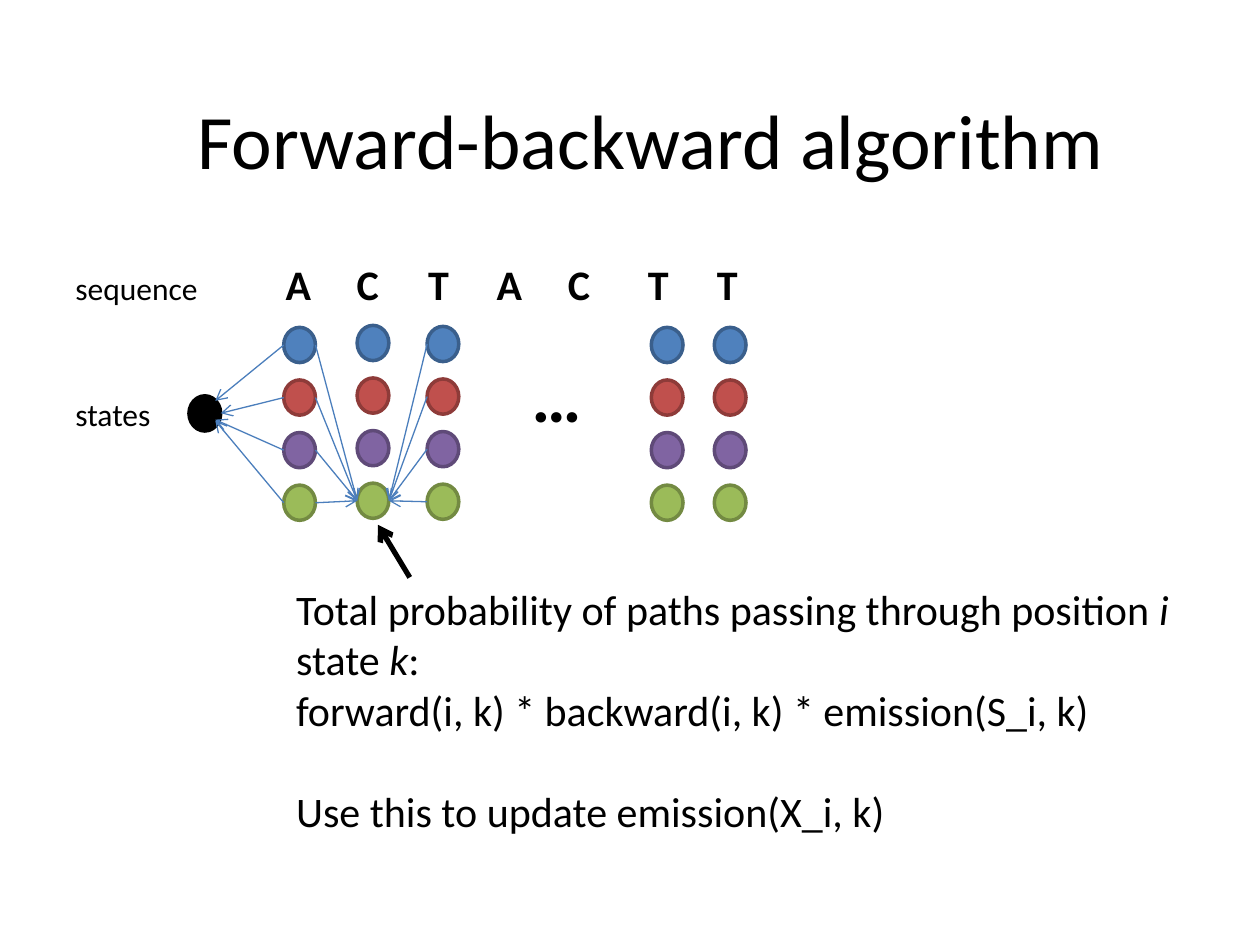
from dataclasses import dataclass

from lxml import etree
from pptx import Presentation
from pptx.dml.color import RGBColor
from pptx.enum.shapes import MSO_CONNECTOR, MSO_SHAPE
from pptx.enum.text import MSO_ANCHOR, PP_ALIGN
from pptx.oxml.ns import qn
from pptx.slide import Slide
from pptx.util import Cm, Pt

COLORS = {
    "black": "000000",
    "arrow": "4B7EBC",
    "blue": "4F81BD",
    "blue edge": "3A5F8C",
    "red": "C0504D",
    "red edge": "8E3B39",
    "purple": "8064A2",
    "purple edge": "5F4A78",
    "green": "9BBB59",
    "green edge": "738A42",
}
STATES = ("blue", "red", "purple", "green")
STATE_WIDTH, STATE_HEIGHT, STATE_PITCH = 0.64, 0.71, 1.06


@dataclass(frozen=True)
class Position:
    left: float
    top: float

    @property
    def right(self) -> float:
        return self.left + STATE_WIDTH

    def middle(self, state: int) -> float:
        return self.top + state * STATE_PITCH + STATE_HEIGHT / 2


@dataclass(frozen=True)
class Arrow:
    start: tuple[float, float]
    end: tuple[float, float]
    color: str = "arrow"
    width: float = 0.75


def rgb(name: str) -> RGBColor:
    return RGBColor.from_string(COLORS[name])


def add_state(slide: Slide, left: float, top: float, fill: str, edge: str) -> None:
    circle = slide.shapes.add_shape(
        MSO_SHAPE.OVAL, Cm(left), Cm(top), Cm(STATE_WIDTH), Cm(STATE_HEIGHT)
    )
    circle.shadow.inherit = False
    circle.fill.solid()
    circle.fill.fore_color.rgb = rgb(fill)
    circle.line.color.rgb = rgb(edge)
    circle.line.width = Pt(2)


def add_position(slide: Slide, position: Position) -> None:
    for index, state in enumerate(STATES):
        top = position.top + index * STATE_PITCH
        add_state(slide, position.left, top, state, f"{state} edge")


def add_arrow(slide: Slide, arrow: Arrow) -> None:
    ends = [Cm(length) for length in (*arrow.start, *arrow.end)]
    connector = slide.shapes.add_connector(MSO_CONNECTOR.STRAIGHT, *ends)
    connector.line.color.rgb = rgb(arrow.color)
    connector.line.width = Pt(arrow.width)
    outline = connector.line._get_or_add_ln()
    etree.SubElement(outline, qn("a:tailEnd"), type="arrow")
    etree.SubElement(connector._element.spPr, qn("a:effectLst"))


def add_text(
    slide: Slide,
    text: str | list[list[str]],
    *,
    box: tuple[float, float, float, float],
    size: float,
    bold: bool = False,
    align: PP_ALIGN = PP_ALIGN.LEFT,
    anchor: MSO_ANCHOR = MSO_ANCHOR.TOP,
    tabs: tuple[float, ...] = (),
    last_gap: float = 0,
) -> None:
    frame = slide.shapes.add_textbox(*(Cm(length) for length in box)).text_frame
    frame.word_wrap = True
    frame.vertical_anchor = anchor
    lines = [[text]] if isinstance(text, str) else text
    for index, pieces in enumerate(lines):
        paragraph = frame.add_paragraph() if index else frame.paragraphs[0]
        paragraph.alignment = align
        if last_gap and index == len(lines) - 1:
            paragraph.space_before = Pt(last_gap)
        if tabs:
            stops = etree.SubElement(paragraph._p.get_or_add_pPr(), qn("a:tabLst"))
            for tab in tabs:
                etree.SubElement(stops, qn("a:tab"), pos=str(int(Cm(tab))), algn="l")
        for order, piece in enumerate(pieces):
            run = paragraph.add_run()
            run.text = piece
            run.font.name = "Calibri"
            run.font.size = Pt(size)
            run.font.bold = bold
            run.font.italic = order % 2 == 1
            run.font.color.rgb = rgb("black")


def main() -> None:
    presentation = Presentation()
    presentation.slide_width = Cm(25.4)
    presentation.slide_height = Cm(19.05)
    slide = presentation.slides.add_slide(presentation.slide_layouts[6])

    first = Position(5.72, 6.6)
    current = Position(7.2, 6.56)
    following = Position(8.61, 6.58)
    closing = [Position(13.13, 6.6), Position(14.4, 6.6)]

    add_text(slide, "Forward-backward algorithm", box=(1.69, 1.2, 22.86, 3.18),
             size=44, align=PP_ALIGN.CENTER, anchor=MSO_ANCHOR.MIDDLE)
    add_text(slide, "\t".join("ACTACTT"), box=(5.51, 5.08, 11.43, 1.27), size=24,
             bold=True, tabs=(1.43, 2.87, 4.25, 5.69, 7.3, 8.69))
    for label, top in (("sequence", 5.3), ("states", 7.84)):
        add_text(slide, label, box=(1.27, top, 3.39, 1.12), size=18)
    add_text(slide, "…", box=(9.74, 6.98, 2.96, 2.16), size=40, bold=True,
             align=PP_ALIGN.CENTER)

    for position in (first, current, following, *closing):
        add_position(slide, position)
    add_state(slide, 3.81, 7.98, "black", "black")

    origin_ends = ((4.34, 8.08), (4.45, 8.33), (4.34, 8.46), (4.34, 8.48))
    target = current.middle(len(STATES) - 1)
    for state, origin_end in enumerate(origin_ends):
        add_arrow(slide, Arrow((first.left, first.middle(state)), origin_end))
        add_arrow(slide, Arrow((first.right, first.middle(state)),
                               (current.left, target)))
        add_arrow(slide, Arrow((following.left, following.middle(state)),
                               (current.right, target)))
    add_arrow(slide, Arrow((8.26, 11.64), (7.62, 10.58), "black", 3))

    explanation = [
        ["Total probability of paths passing through position ", "i", " state ", "k", ":"],
        ["forward(i, k) * backward(i, k) * emission(S_i, k)"],
        ["Use this to update emission(X_i, k)"],
    ]
    add_text(slide, explanation, box=(5.72, 11.64, 18.42, 5.38), size=24, last_gap=29)

    presentation.save("out.pptx")


if __name__ == "__main__":
    main()
